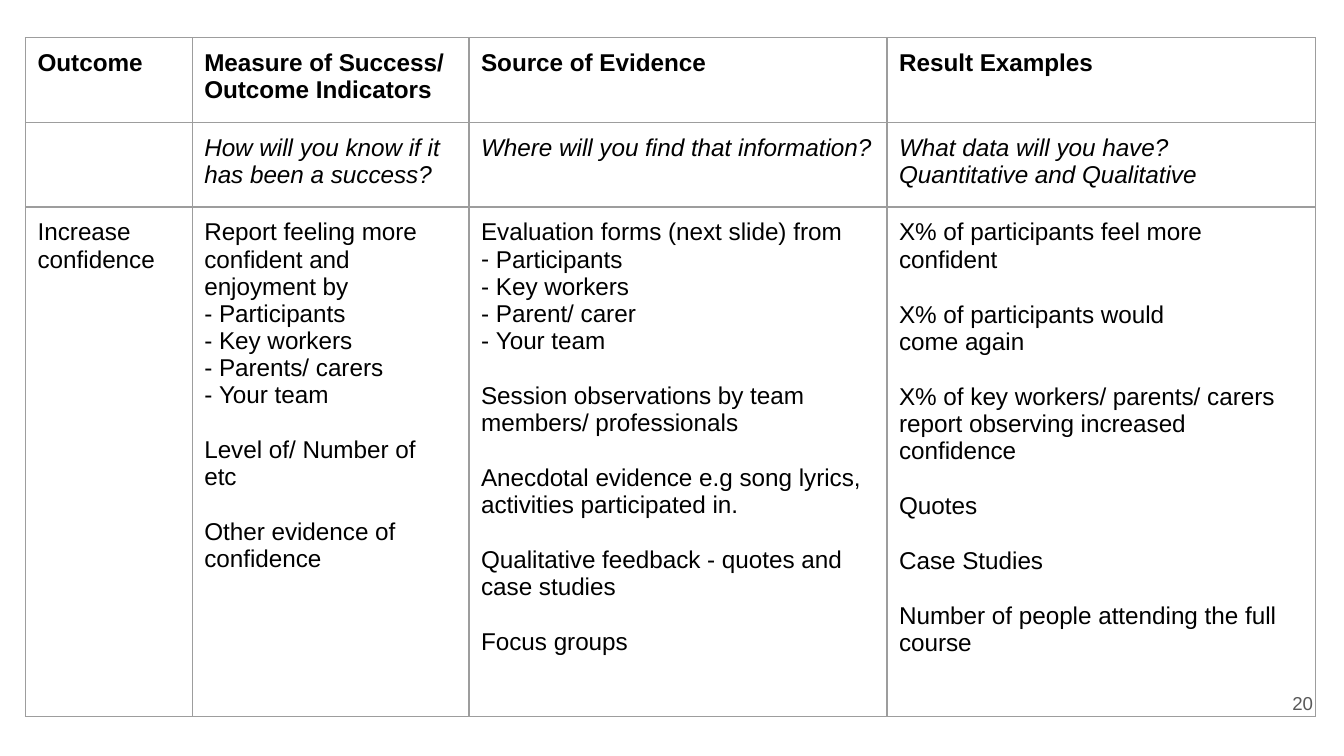
import pptx
import pptx.util
import pptx.dml.color
import pptx.enum.text
import pptx.oxml.ns
from lxml import etree

Inches = pptx.util.Inches
Pt = pptx.util.Pt
RGBColor = pptx.dml.color.RGBColor
PP_ALIGN = pptx.enum.text.PP_ALIGN
qn = pptx.oxml.ns.qn

BLACK = RGBColor(0x00, 0x00, 0x00)
GREY = RGBColor(0x59, 0x59, 0x59)
BORDER = RGBColor(0x9D, 0x9D, 0x9D)

FONT = "Arial"
LEFT, TOP = 0.19, 0.28
COLUMN_WIDTHS = [1.24, 2.06, 3.11, 3.19]
ROW_HEIGHTS = [0.63, 0.63, 3.79]
INDENT, HANGING = 0.09, 0.11
GROUP_GAP = 15
PAGE_NUMBER = "20"

HEADINGS = [
    "Outcome",
    "Measure of Success/ Outcome Indicators",
    "Source of Evidence",
    "Result Examples",
]
QUESTIONS = [
    "",
    "How will you know if it has been a success?",
    "Where will you find that information?",
    "What data will you have? Quantitative and Qualitative",
]
QUESTION_RIGHTS = [0, 0, 0, 0.6]
DETAIL_RIGHTS = [0, 0.25, 0.15, 0.2]
NARROW_RIGHTS = {"X% of participants would come again": 0.8}
DETAILS = [
    [("Increase confidence", [])],
    [
        ("Report feeling more confident and enjoyment by",
         ["Participants", "Key workers", "Parents/ carers", "Your team"]),
        ("Level of/ Number of etc", []),
        ("Other evidence of confidence", []),
    ],
    [
        ("Evaluation forms (next slide) from",
         ["Participants", "Key workers", "Parent/ carer", "Your team"]),
        ("Session observations by team members/ professionals", []),
        ("Anecdotal evidence e.g song lyrics, activities participated in.", []),
        ("Qualitative feedback - quotes and case studies", []),
        ("Focus groups", []),
    ],
    [
        ("X% of participants feel more confident", []),
        ("X% of participants would come again", []),
        ("X% of key workers/ parents/ carers report observing increased confidence", []),
        ("Quotes", []),
        ("Case Studies", []),
        ("Number of people attending the full course", []),
    ],
]


def add_text(cell, text, size=13, color=BLACK, bold=False, italic=False, before=0,
             line=None, align=PP_ALIGN.LEFT, indent=INDENT, right=0, dash=False):
    frame = cell.text_frame
    paragraph = frame.add_paragraph() if frame.text else frame.paragraphs[0]
    paragraph.alignment = align
    paragraph.space_before = Pt(before)
    if line:
        paragraph.line_spacing = Pt(line)
    run = paragraph.add_run()
    run.text = text
    run.font.name = FONT
    run.font.size = Pt(size)
    run.font.bold = bold
    run.font.italic = italic
    run.font.color.rgb = color
    properties = paragraph._p.get_or_add_pPr()
    hanging = HANGING if dash else 0
    properties.set("marL", str(Inches(indent + hanging)))
    properties.set("marR", str(Inches(right)))
    properties.set("indent", str(Inches(-hanging)))
    if dash:
        etree.SubElement(properties, qn("a:buFont")).set("typeface", FONT)
        etree.SubElement(properties, qn("a:buChar")).set("char", "-")


def style_cell(cell):
    cell.margin_left = cell.margin_right = cell.margin_bottom = 0
    cell.margin_top = Inches(0.09)
    properties = cell._tc.get_or_add_tcPr()
    for side in ("lnL", "lnR", "lnT", "lnB"):
        border = etree.SubElement(properties, qn("a:" + side))
        border.set("w", str(Pt(0.75)))
        fill = etree.SubElement(border, qn("a:solidFill"))
        etree.SubElement(fill, qn("a:srgbClr")).set("val", str(BORDER))
    cell.fill.background()


presentation = pptx.Presentation()
presentation.slide_width = Inches(10)
presentation.slide_height = presentation.slide_width * 9 // 16
slide = presentation.slides.add_slide(presentation.slide_layouts[6])

table = slide.shapes.add_table(
    len(ROW_HEIGHTS), len(COLUMN_WIDTHS), Inches(LEFT), Inches(TOP),
    Inches(sum(COLUMN_WIDTHS)), Inches(sum(ROW_HEIGHTS))).table
table.first_row = False
table.horz_banding = False
for column, width in zip(table.columns, COLUMN_WIDTHS):
    column.width = Inches(width)
for row, height in zip(table.rows, ROW_HEIGHTS):
    row.height = Inches(height)
for cell in table.iter_cells():
    style_cell(cell)

for index, groups in enumerate(DETAILS):
    add_text(table.cell(0, index), HEADINGS[index], bold=True)
    if QUESTIONS[index]:
        add_text(table.cell(1, index), QUESTIONS[index], italic=True,
                 right=QUESTION_RIGHTS[index])
    detail_cell = table.cell(2, index)
    for position, (lead, items) in enumerate(groups):
        add_text(detail_cell, lead, before=GROUP_GAP if position else 0,
                 right=NARROW_RIGHTS.get(lead, DETAIL_RIGHTS[index]))
        for item in items:
            add_text(detail_cell, item, dash=True)

add_text(table.cell(2, 3), PAGE_NUMBER, size=10, color=GREY, before=24, line=7,
         align=PP_ALIGN.RIGHT, indent=0, right=0.02)

presentation.save("out.pptx")
